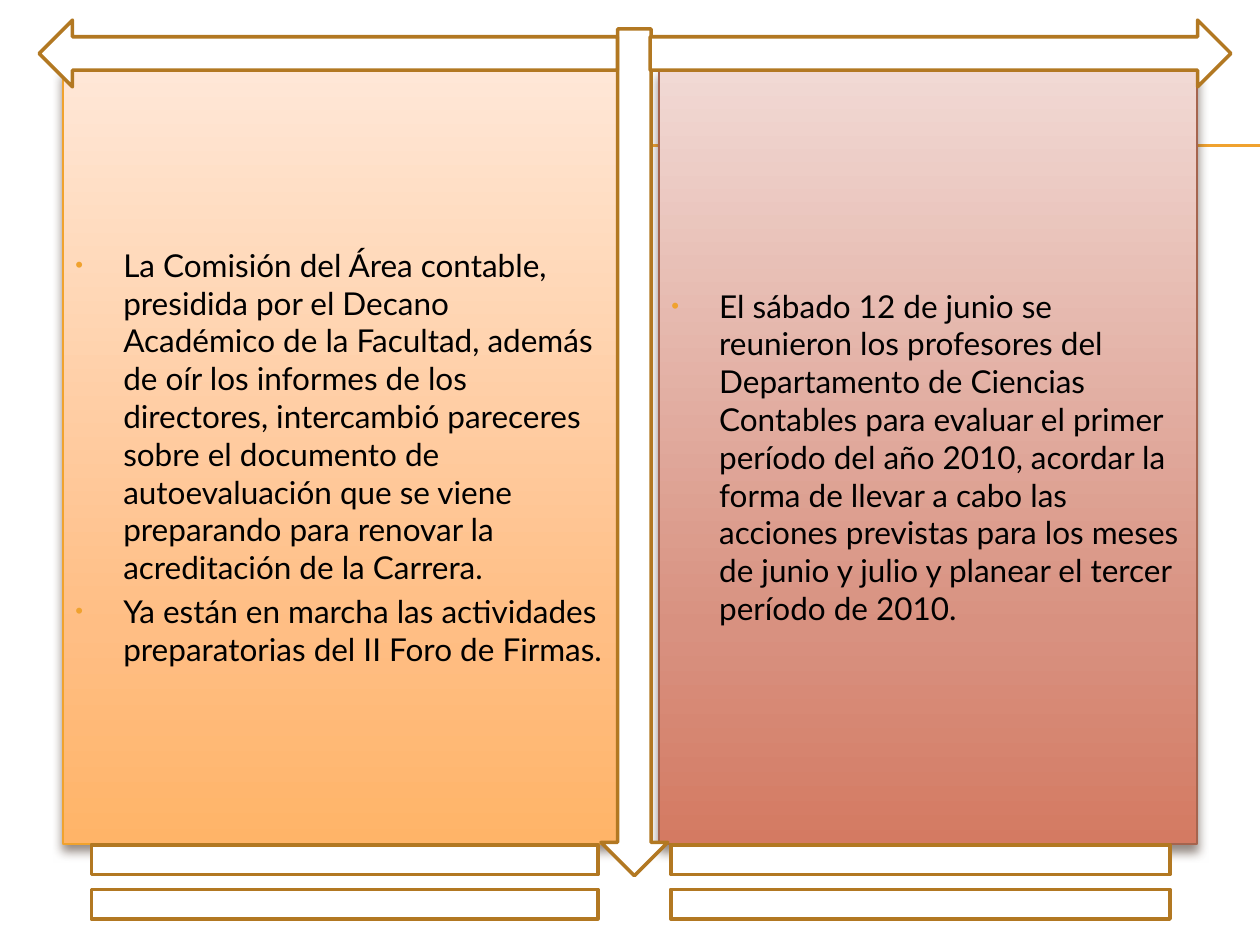
from pptx import Presentation
from pptx.dml.color import RGBColor as RGB
from pptx.enum.shapes import MSO_CONNECTOR as LINK, MSO_SHAPE as SHAPE
from pptx.enum.text import MSO_ANCHOR as ANCHOR, PP_ALIGN as ALIGN
from pptx.oxml import parse_xml
from pptx.oxml.ns import nsdecls, qn
from pptx.util import Inches, Pt
from copy import deepcopy

WHITE = RGB(0xFF, 0xFF, 0xFF)
BLACK = RGB(0, 0, 0)
GOLD = RGB(0xF0, 0xA2, 0x2E)
BROWN = RGB(0xB2, 0x78, 0x22)
BRICK = RGB(0xA5, 0x64, 0x4E)
SHADE = RGB(0x4E, 0x3B, 0x30)
PEACH = [RGB(0xFF, 0xE7, 0xD7), RGB(0xFF, 0xBE, 0x84), RGB(0xFF, 0xB4, 0x68)]
ROSE = [RGB(0xF1, 0xD9, 0xD4), RGB(0xD8, 0x91, 0x80), RGB(0xD4, 0x7A, 0x62)]
STOPS = [0, 0.72, 1]

AREA = [
    "La Comisión del Área contable, presidida por el Decano Académico de la Facultad, "
    "además de oír los informes de los directores, intercambió pareceres sobre el "
    "documento de autoevaluación que se viene preparando para renovar la acreditación "
    "de la Carrera.",
    "Ya están en marcha las actividades preparatorias del II Foro de Firmas.",
]
STAFF = [
    "El sábado 12 de junio se reunieron los profesores del Departamento de Ciencias "
    "Contables para evaluar el primer período del año 2010, acordar la forma de llevar "
    "a cabo las acciones previstas para los meses de junio y julio y planear el tercer "
    "período de 2010.",
]


def make(tag, inner="", attrs=""):
    """Return a new drawing element."""
    return parse_xml(f"<a:{tag} {nsdecls('a')} {attrs}>{inner}</a:{tag}>")


def add_rule(slide, top):
    """Draw a thin rule that runs to the right edge."""
    rule = slide.shapes.add_connector(
        LINK.STRAIGHT, Inches(0.56), Inches(top), Inches(10), Inches(top))
    rule.line.color.rgb = GOLD
    rule.line.width = Pt(0.75)
    rule._element.spPr.append(make("effectLst"))


def add_form(slide, kind, box, edge, width):
    """Add a preset shape with an outline and no shadow."""
    form = slide.shapes.add_shape(kind, *map(Inches, box))
    form.shadow.inherit = False
    form.line.color.rgb = edge
    form.line.width = Pt(width)
    return form


def add_frame(slide, kind, box):
    """Add a white shape with a brown outline."""
    form = add_form(slide, kind, box, BROWN, 2)
    form.fill.solid()
    form.fill.fore_color.rgb = WHITE


def fade(form, tones):
    """Fill a shape with a gradient from top to bottom."""
    form.fill.gradient()
    form.fill.gradient_angle = 270
    stops = form._element.spPr.find(qn("a:gradFill")).find(qn("a:gsLst"))
    stops.append(deepcopy(stops[-1]))
    for stop, place, tone in zip(form.fill.gradient_stops, STOPS, tones):
        stop.position = place
        stop.color.rgb = tone


def cast(form):
    """Give a shape a soft shadow below it."""
    tone = f'<a:srgbClr val="{SHADE}"><a:alpha val="60000"/></a:srgbClr>'
    shade = make("outerShdw", tone,
                 f'blurRad="{Pt(6)}" dist="{Pt(4)}" dir="5400000" rotWithShape="0"')
    form._element.spPr.find(qn("a:effectLst")).append(shade)


def add_text(para, text, size=18, face="Lato", color=BLACK, gap=0):
    """Write a bulleted paragraph."""
    props = para._p.get_or_add_pPr()
    props.set("marL", str(Inches(0.38)))
    props.set("indent", str(-Inches(0.38)))
    props.append(make("buClr", f'<a:srgbClr val="{GOLD}"/>'))
    props.append(make("buSzPct", attrs='val="70000"'))
    props.append(make("buFont", attrs='typeface="Arial"'))
    props.append(make("buChar", attrs='char="•"'))
    para.alignment = ALIGN.LEFT
    para.space_before = Pt(gap)
    run = para.add_run()
    run.text = text
    run.font.size = Pt(size)
    run.font.name = face
    run.font.color.rgb = color


def add_panel(slide, box, tones, edge, items):
    """Add a shaded panel with a bulleted list."""
    panel = add_form(slide, SHAPE.RECTANGLE, box, edge, 0.79)
    fade(panel, tones)
    cast(panel)
    frame = panel.text_frame
    frame.word_wrap = True
    frame.vertical_anchor = ANCHOR.MIDDLE
    for i, item in enumerate(items):
        para = frame.add_paragraph() if i else frame.paragraphs[0]
        add_text(para, item, gap=3.6 if i else 0)


def main():
    """Build the slide."""
    deck = Presentation()
    deck.slide_width, deck.slide_height = Inches(10), Inches(7.5)
    slide = deck.slides.add_slide(deck.slide_layouts[6])
    for top in (1.15, 1.16):
        add_rule(slide, top)
    add_panel(slide, (0.5, 0.55, 4.42, 6.15), PEACH, GOLD, AREA)
    add_panel(slide, (5.23, 0.55, 4.27, 6.15), ROSE, BRICK, STAFF)
    for kind, box in (
        (SHAPE.DOWN_ARROW, (4.77, 0.23, 0.53, 6.72)),
        (SHAPE.RIGHT_ARROW, (5.16, 0.16, 4.61, 0.53)),
        (SHAPE.LEFT_ARROW, (0.31, 0.16, 4.59, 0.53)),
        (SHAPE.MATH_EQUAL, (0, 6.5, 5.47, 1)),
        (SHAPE.MATH_EQUAL, (4.61, 6.5, 5.39, 1)),
    ):
        add_frame(slide, kind, box)
    deck.save("out.pptx")


if __name__ == "__main__":
    main()
